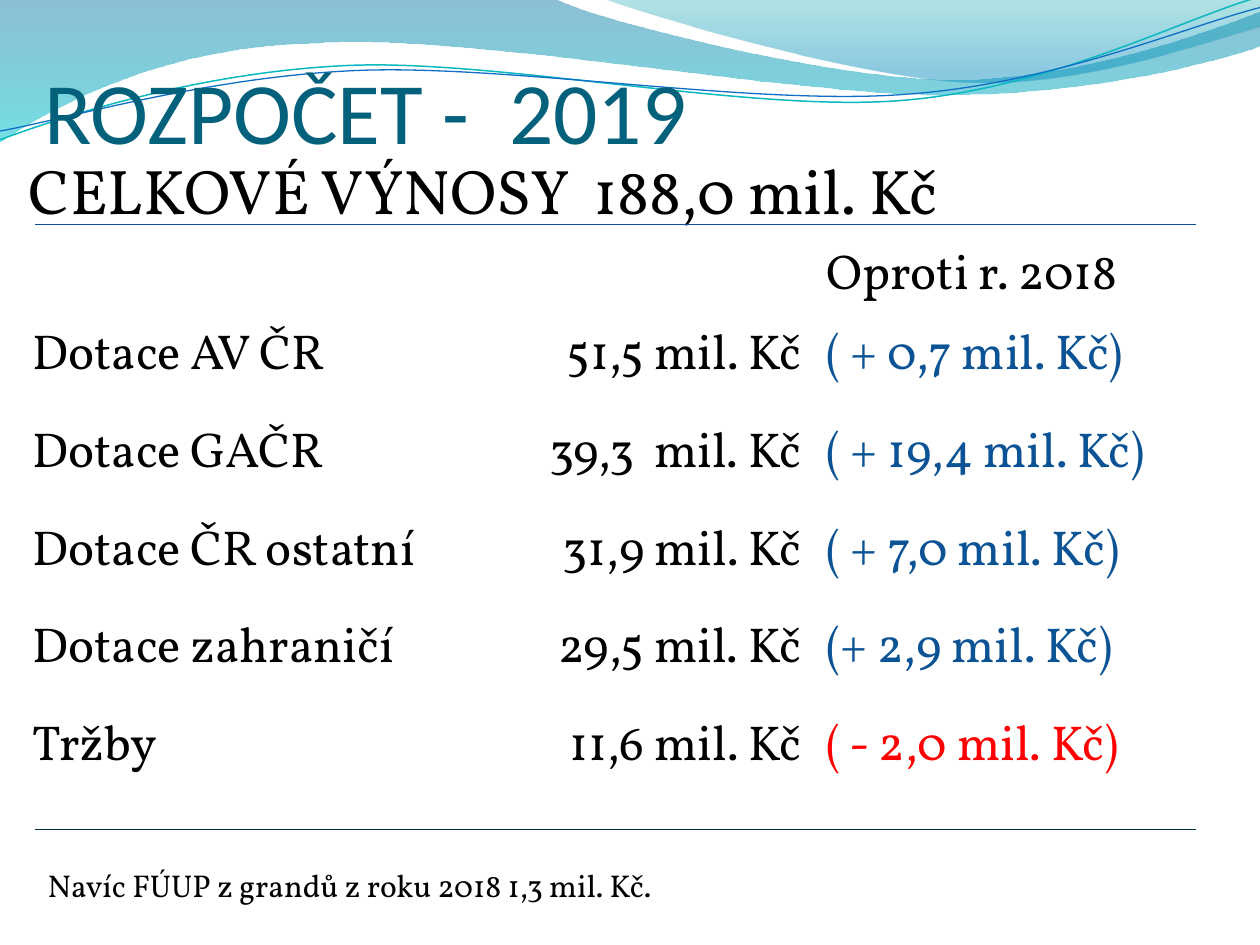
from lxml import etree
from pptx import Presentation
from pptx.dml.color import RGBColor
from pptx.enum.shapes import MSO_CONNECTOR
from pptx.enum.text import MSO_ANCHOR, PP_ALIGN
from pptx.oxml.ns import qn
from pptx.util import Inches, Pt

LINE = MSO_CONNECTOR.STRAIGHT
BOTTOM, TOP = MSO_ANCHOR.BOTTOM, MSO_ANCHOR.TOP
LEFT, RIGHT = PP_ALIGN.LEFT, PP_ALIGN.RIGHT

WIDE, HIGH = Inches(10), Inches(7.5)
COL, ROW = WIDE // 100, HIGH // 75
SERIF, SANS = "Vollkorn", "Calibri"
INK = {
    "title": "04617B", "text": "000000", "plus": "0B5394", "minus": "FF0000",
    "upper": "095295", "lower": "02303E",
    "sea": "0074A1", "aqua": "00C6CF", "teal": "00A1A9", "sky": "008BBF",
    "mint": "0AB8BF", "blue": "0F6FC6",
}

FILLS = [
    ([[(0, 0)], [(44, -0.1)],
      [(47.6, 1.7), (66.4, 6.3), (75.8, 6.3)],
      [(85.3, 6.3), (95.8, 2.6), (100, 0.9)],
      [(100.1, 3.6)],
      [(98.3, 4.4), (87, 7.6), (74.6, 7.5)],
      [(62.2, 7.5), (38.2, 2.8), (25.7, 3.4)],
      [(12.9, 3.6), (4.6, 8.3), (-0.1, 11.3)]],
     [(0, "sea", 45), (1, "aqua", 55)]),
    ([[(47.9, -0.1)],
      [(50.9, 1.1), (68.2, 6.2), (76.9, 6.5)],
      [(85.6, 6.9), (96.1, 3.2), (100, 2.1)],
      [(100, 0)]],
     [(0, "teal", 30), (0.8, "sky", 45)]),
]
EDGES = [
    ([[(0, 11.1)],
      [(4.8, 9.3), (15.8, 5.7), (27.7, 5.2)],
      [(39.5, 4.7), (59.3, 8.9), (71.3, 8)],
      [(83.3, 7.1), (93.8, 1.5), (99.8, -0.2)]], "mint", 0.85),
    ([[(0, 10.4)],
      [(4.7, 9.6), (16.4, 6.1), (28.3, 5.6)],
      [(40.3, 5.1), (59.7, 8.4), (71.7, 7.5)],
      [(83.6, 6.7), (94.1, 2.1), (100, 0.6)]], "blue", 0.75),
]
ROWS = [
    ("", "", "Oproti r. 2018", "text"),
    ("Dotace AV ČR", "51,5 mil. Kč", "( + 0,7 mil. Kč)", "plus"),
    ("Dotace GAČR", "39,3  mil. Kč", "( + 19,4 mil. Kč)", "plus"),
    ("Dotace ČR ostatní", "31,9 mil. Kč", "( + 7,0 mil. Kč)", "plus"),
    ("Dotace zahraničí", "29,5 mil. Kč", "(+ 2,9 mil. Kč)", "plus"),
    ("Tržby", "11,6 mil. Kč", "( - 2,0 mil. Kč)", "minus"),
]


def grid(x, y, w, h):
    return round(x * COL), round(y * ROW), round(w * COL), round(h * ROW)


def shade(tone):
    return RGBColor.from_string(INK[tone])


def style(para, size, tone="text", face=SERIF):
    for run in para.runs:
        run.font.size = Pt(size)
        run.font.name = face
        run.font.bold = False
        run.font.color.rgb = shade(tone)


def curve(slide, box, parts, close):
    points = [(box[0] + x * COL, box[1] + y * ROW)
              for part in parts for x, y in part]
    pen = slide.shapes.build_freeform(*points[0])
    pen.add_line_segments(points[1:], close=close)
    shape = pen.convert_to_shape()
    shape.shadow.inherit = False
    nodes = iter(list(shape.element.iter(qn("a:lnTo"))))
    for part in parts[1:]:
        first, *rest = [next(nodes) for point in part]
        if rest:
            first.tag = qn("a:cubicBezTo")
            for node in rest:
                first.append(node[0])
                node.getparent().remove(node)
    return shape


def waves(slide, box):
    for parts, stops in FILLS:
        shape = curve(slide, box, parts, True)
        shape.line.fill.background()
        shape.fill.gradient()
        shape.fill.gradient_angle = 270
        for stop, (place, tone, alpha) in zip(shape.fill.gradient_stops, stops):
            stop.position = place
            stop.color.rgb = shade(tone)
        tones = shape.element.spPr.iter(qn("a:srgbClr"))
        for node, (place, tone, alpha) in zip(tones, stops):
            etree.SubElement(node, qn("a:alpha")).set("val", str(alpha * 1000))
    for parts, tone, width in EDGES:
        shape = curve(slide, box, parts, False)
        shape.fill.background()
        shape.line.color.rgb = shade(tone)
        shape.line.width = Pt(width)


def title(slide, box):
    shape = slide.shapes.title
    shape.element.getparent().append(shape.element)
    shape.left, shape.top, shape.width, shape.height = box
    frame = shape.text_frame
    frame.text = "ROZPOČET -  2019"
    frame.word_wrap = True
    frame.vertical_anchor = BOTTOM
    frame.margin_left = frame.margin_right = frame.margin_bottom = 0
    frame.paragraphs[0].alignment = LEFT
    style(frame.paragraphs[0], 50, "title", SANS)


def label(slide, box, text, size, inset=0.1):
    frame = slide.shapes.add_textbox(*box).text_frame
    frame.word_wrap = True
    frame.margin_left = Inches(inset)
    frame.text = text
    style(frame.paragraphs[0], size)


def rule(slide, box, tone):
    x, y, w, h = box
    line = slide.shapes.add_connector(LINE, x, y, x + w, y + h)
    line.line.color.rgb = shade(tone)
    line.line.width = Pt(0.75)
    etree.SubElement(line.element.spPr, qn("a:effectLst"))


def budget(slide, box):
    table = slide.shapes.add_table(len(ROWS), 3, *box).table
    table.first_row = table.horz_banding = False
    for col, share in zip(table.columns, (33.5, 29.5, 31.5)):
        col.width = round(box[2] * share / 94.5)
    head = round(6.35 * ROW)
    for r, (name, total, change, tone) in enumerate(ROWS):
        table.rows[r].height = (box[3] - head) // (len(ROWS) - 1) if r else head
        looks = (("text", LEFT), ("text", RIGHT), (tone, LEFT))
        for c, (text, (ink, align)) in enumerate(zip((name, total, change), looks)):
            cell = table.cell(r, c)
            cell.fill.background()
            cell.vertical_anchor = TOP
            cell.text = text
            para = cell.text_frame.paragraphs[0]
            para.alignment = align
            style(para, 28, ink)


def main():
    deck = Presentation()
    deck.slide_width, deck.slide_height = WIDE, HIGH
    slide = deck.slides.add_slide(deck.slide_layouts[5])
    waves(slide, grid(0, 0, 100, 11.4))
    title(slide, grid(3.5, 0.4, 96.5, 12.5))
    label(slide, grid(0.8, 11.5, 99.2, 7.9),
          "CELKOVÉ VÝNOSY  188,0 mil. Kč", 36, 0.15)
    rule(slide, grid(2.8, 17.8, 92.1, 0), "upper")
    rule(slide, grid(2.8, 65.83, 92.1, 0), "lower")
    budget(slide, grid(1.6, 18.8, 94.5, 45.1))
    label(slide, grid(2.8, 68.23, 74.8, 4),
          "Navíc FÚUP z grandů z roku 2018 1,3 mil. Kč.", 18)
    deck.save("out.pptx")


if __name__ == "__main__":
    main()
